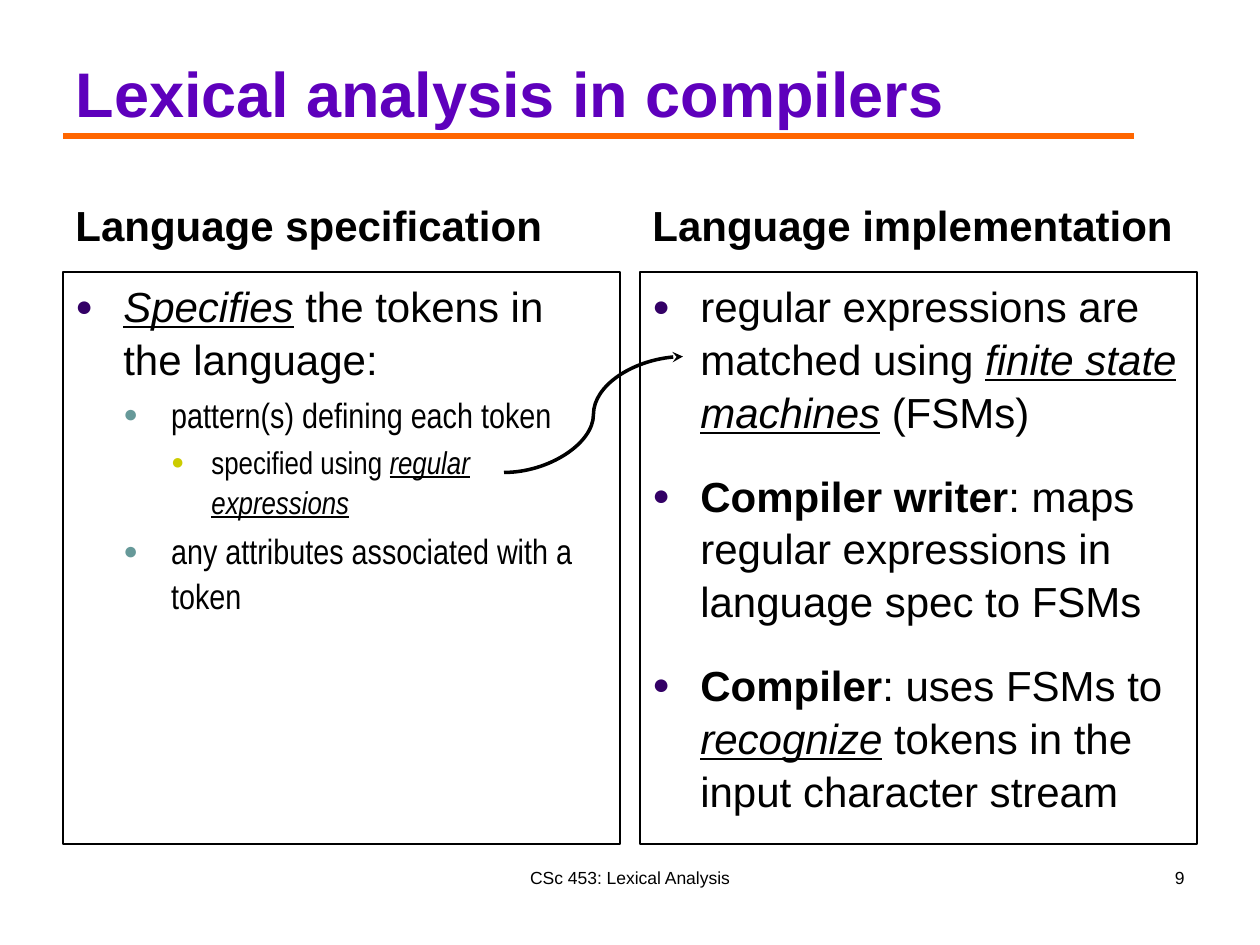
import pptx
import pptx.util
import pptx.dml.color
import pptx.enum.text
import pptx.enum.shapes
import pptx.oxml
import pptx.oxml.ns

Inches = pptx.util.Inches
Pt = pptx.util.Pt
ALIGN = pptx.enum.text.PP_ALIGN
ANCHOR = pptx.enum.text.MSO_ANCHOR
LINK = pptx.enum.shapes.MSO_CONNECTOR
COLORS = {"title": "5E00BC", "rule": "FF6600", "ink": "000000",
          "dot0": "330066", "dot1": "669999", "dot2": "CCCC00"}
LEVELS = [(0.38, 0.38, 24, "Arial"), (0.76, 0.38, 20, "Arial Narrow"),
          (1.08, 0.32, 18, "Arial Narrow")]


def tint(name):
    """Return the named colour."""
    return pptx.dml.color.RGBColor.from_string(COLORS[name])


def node(text):
    """Parse an element in the drawing namespace."""
    head, rest = text.split(" ", 1)
    return pptx.oxml.parse_xml(f'{head} {pptx.oxml.ns.nsdecls("a")} {rest}')


def add_run(para, text, size, face="Arial", color="ink", style=""):
    """Add a run; style holds b for bold and i for underlined italic."""
    run = para.add_run()
    run.text = text
    font = run.font
    font.name, font.size = face, Pt(size)
    font.bold = "b" in style
    font.italic = font.underline = "i" in style
    font.color.rgb = tint(color)


def add_text(slide, box, text, size, align=ALIGN.LEFT, anchor=ANCHOR.TOP, style=""):
    """Add a one-paragraph text box."""
    frame = slide.shapes.add_textbox(*map(Inches, box)).text_frame
    frame.word_wrap = True
    frame.vertical_anchor = anchor
    para = frame.paragraphs[0]
    para.alignment = align
    add_run(para, text, size, style=style)


def add_line(slide, kind, ends, color, width):
    """Add a connector without a shadow and return it."""
    line = slide.shapes.add_connector(kind, *map(Inches, ends))
    line.line.color.rgb = tint(color)
    line.line.width = Pt(width)
    line._element.spPr.append(node("<a:effectLst />"))
    return line


def add_title(slide, box, text):
    """Place the title with the rule along its lower edge."""
    left, top, width, height = box
    shape = slide.shapes.title
    shape.left, shape.top, shape.width, shape.height = map(Inches, box)
    frame = shape.text_frame
    frame.word_wrap = True
    frame.vertical_anchor = ANCHOR.BOTTOM
    para = frame.paragraphs[0]
    para.alignment = ALIGN.LEFT
    add_run(para, text, 36, color="title", style="b")
    base = top + height
    add_line(slide, LINK.STRAIGHT, (left, base, left + width - 0.5, base), "rule", 3.75)


def add_item(para, level, before, runs):
    """Fill a bulleted paragraph from pairs of text and style."""
    left, hang, size, face = LEVELS[level]
    para.alignment = ALIGN.LEFT
    para.level = level
    para.line_spacing = 1.05
    para.space_before = Pt(before or size * 0.2)
    props = para._p.get_or_add_pPr()
    props.set("marL", str(Inches(left)))
    props.set("indent", str(-Inches(hang)))
    for text in (f'<a:buClr ><a:srgbClr val="{COLORS[f"dot{level}"]}"/></a:buClr>',
                 '<a:buSzPct val="70000"/>',
                 '<a:buFont typeface="Arial"/>',
                 '<a:buChar char="●"/>'):
        props.append(node(text))
    for text, style in runs:
        add_run(para, text, size, face, style=style)


def add_column(slide, box, head, items):
    """Place a heading above a framed bullet list."""
    left, top, width, height = box
    add_text(slide, (left, top, width, 0.7), head, 24, anchor=ANCHOR.BOTTOM, style="b")
    panel = slide.shapes.add_shape(
        pptx.enum.shapes.MSO_SHAPE.RECTANGLE,
        *map(Inches, (left, top + 0.83, width, height - 0.83)))
    panel.shadow.inherit = False
    panel.fill.background()
    panel.line.color.rgb = tint("ink")
    panel.line.width = Pt(0.75)
    frame = panel.text_frame
    frame.word_wrap = True
    frame.vertical_anchor = ANCHOR.TOP
    for i, item in enumerate(items):
        para = frame.add_paragraph() if i else frame.paragraphs[0]
        add_item(para, *item)


def add_arrow(slide, box):
    """Draw a curved arrow from the lower left to the upper right of the box."""
    left, top, width, height = box
    ends = (left, top + height, left + width, top)
    arrow = add_line(slide, LINK.CURVE, ends, "ink", 2)
    arrow.line._get_or_add_ln().append(node('<a:tailEnd type="stealth"/>'))


def add_footer(slide, box, text, number):
    """Place the centred footer and the page number at the right."""
    left, top, width, height = box
    add_text(slide, (left + (width - 3.17) / 2, top, 3.17, height), text, 10, ALIGN.CENTER)
    add_text(slide, (left + width - 2.33, top, 2.33, height), number, 10, ALIGN.RIGHT)


def main():
    """Build and save the slide."""
    deck = pptx.Presentation()
    deck.slide_width, deck.slide_height = Inches(10), Inches(7.5)
    slide = deck.slides.add_slide(deck.slide_layouts[5])
    add_title(slide, (0.5, 0.3, 9, 0.78), "Lexical analysis in compilers")
    spec = [
        (0, None, [("Specifies", "i"), (" the tokens in the language:", "")]),
        (1, None, [("pattern(s) defining each token", "")]),
        (2, None, [("specified using ", ""), ("regular expressions", "i")]),
        (1, None, [("any attributes associated with a token", "")]),
    ]
    build = [
        (0, None, [("regular expressions are matched using ", ""),
                   ("finite state machines", "i"), (" (FSMs)", "")]),
        (0, 17.5, [("Compiler writer", "b"),
                   (": maps regular expressions in language spec to FSMs", "")]),
        (0, 17.5, [("Compiler", "b"), (": uses FSMs to ", ""), ("recognize", "i"),
                   (" tokens in the input character stream", "")]),
    ]
    columns = [("Language specification", spec), ("Language implementation", build)]
    for i, (head, items) in enumerate(columns):
        add_column(slide, (0.5 + 4.58 * i, 1.33, 4.42, 5.37), head, items)
    add_footer(slide, (0.5, 6.83, 9, 0.5), "CSc 453: Lexical Analysis", "9")
    add_arrow(slide, (4, 2.83, 1.42, 0.92))
    deck.save("out.pptx")


if __name__ == "__main__":
    main()
